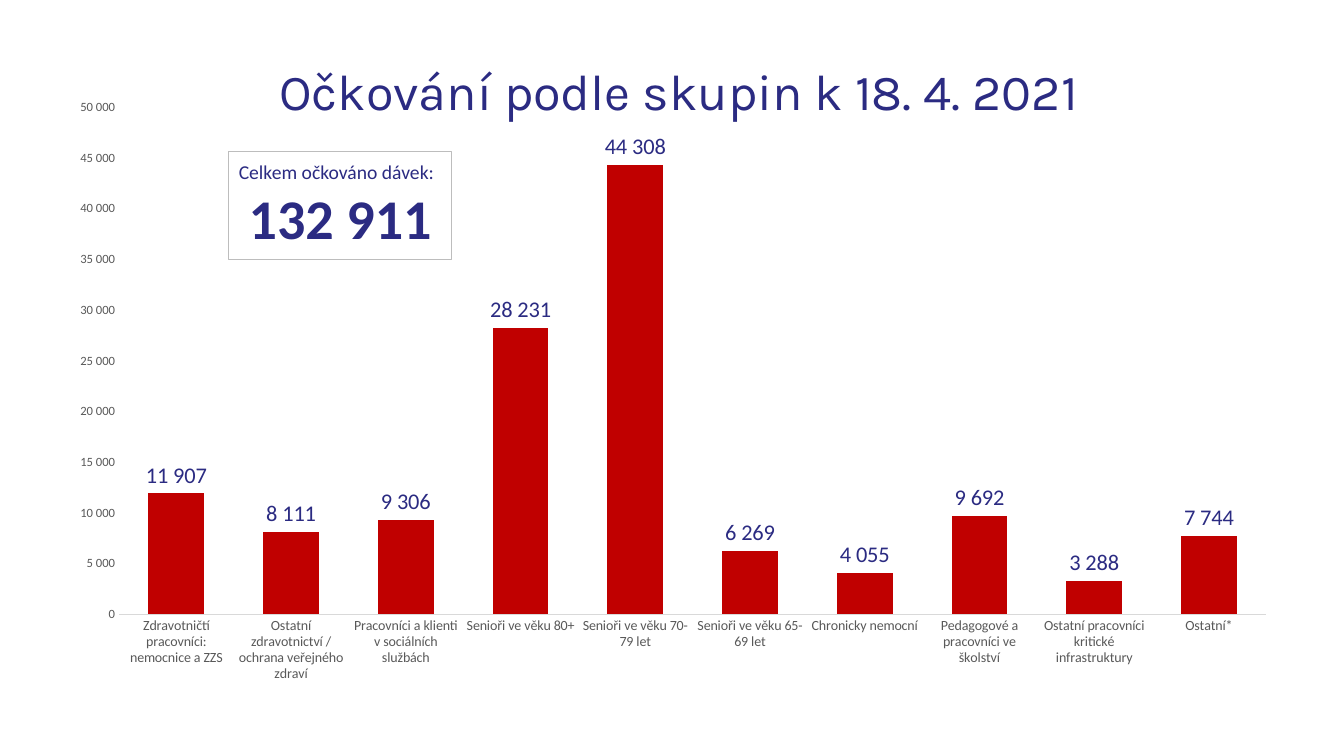
from dataclasses import dataclass

from lxml import etree
from pptx import Presentation
from pptx import util as u
from pptx.chart.data import CategoryChartData
from pptx.dml.color import RGBColor
from pptx.enum import chart as ch, shapes, text
from pptx.oxml import ns

COLS, ROWS = 64, 36


@dataclass(frozen=True)
class Theme:
    navy: str = "2B2B82"
    red: str = "C00000"
    grey: str = "595959"
    axis: str = "D9D9D9"
    border: str = "BDBDBD"
    white: str = "FFFFFF"
    body: str = "Calibri"
    heading: str = "Karla"
    title: int = 36
    total: int = 40
    value: int = 16
    caption: int = 14
    category: int = 10
    scale: int = 9
    number: str = r"[$-10405]#\ ##0;\(#\ ##0\)"


GROUPS = {
    "Zdravotničtí pracovníci: nemocnice a ZZS": 11907,
    "Ostatní zdravotnictví / ochrana veřejného zdraví": 8111,
    "Pracovníci a klienti v sociálních službách": 9306,
    "Senioři ve věku 80+": 28231,
    "Senioři ve věku 70-79 let": 44308,
    "Senioři ve věku 65-69 let": 6269,
    "Chronicky nemocní": 4055,
    "Pedagogové a pracovníci ve školství": 9692,
    "Ostatní pracovníci kritické infrastruktury": 3288,
    "Ostatní*": 7744,
}


class SlideBuilder:
    def __init__(self, prs, theme):
        self.theme = theme
        self.s = prs.slides.add_slide(prs.slide_layouts[6])
        self.col = prs.slide_width / COLS
        self.row = prs.slide_height / ROWS

    def cells(self, x, y, w, h):
        return (round(x * self.col), round(y * self.row),
                round(w * self.col), round(h * self.row))

    def style(self, font, size, color, name=None, bold=False):
        font.size, font.bold = u.Pt(size), bold
        font.name = name or self.theme.body
        font.color.rgb = RGBColor.from_string(color)

    def box(self, cells, lines):
        sp = self.s.shapes.add_shape(shapes.MSO_SHAPE.RECTANGLE, *self.cells(*cells))
        sp.shadow.inherit = False
        sp.fill.solid()
        sp.fill.fore_color.rgb = RGBColor.from_string(self.theme.white)
        sp.line.color.rgb = RGBColor.from_string(self.theme.border)
        sp.line.width = u.Pt(0.75)
        tf = sp.text_frame
        tf.word_wrap = True
        for i, (words, size, bold, align) in enumerate(lines):
            p = tf.add_paragraph() if i else tf.paragraphs[0]
            p.alignment = align
            r = p.add_run()
            r.text = words
            self.style(r.font, size, self.theme.navy, bold=bold)

    def layout(self, parent, index, **settings):
        """Place a chart part by shares of the chart's size."""
        for old in parent.findall(ns.qn("c:layout")):
            parent.remove(old)
        layout = etree.Element(ns.qn("c:layout"))
        manual = etree.SubElement(layout, ns.qn("c:manualLayout"))
        for tag, val in settings.items():
            etree.SubElement(manual, ns.qn(f"c:{tag}")).set("val", str(val))
        parent.insert(index, layout)

    def axis(self, axis, size):
        axis.has_major_gridlines = False
        axis.major_tick_mark = axis.minor_tick_mark = ch.XL_TICK_MARK.NONE
        self.style(axis.tick_labels.font, size, self.theme.grey)

    def column_chart(self, cells, title, groups):
        t = self.theme
        data = CategoryChartData(number_format=t.number)
        data.categories = list(groups)
        data.add_series("Series 1", list(groups.values()))
        chart = self.s.shapes.add_chart(
            ch.XL_CHART_TYPE.COLUMN_CLUSTERED, *self.cells(*cells), data).chart
        chart.has_legend = False
        chart.font.name, chart.font.size = t.body, u.Pt(t.category)

        # Title
        p = chart.chart_title.text_frame.paragraphs[0]
        r = p.add_run()
        r.text = title
        self.style(r.font, t.title, t.navy, t.heading)
        self.layout(chart.chart_title._element, 1,
                    xMode="edge", yMode="edge", x=0.17, y=0.04)

        # Axes
        self.axis(chart.category_axis, t.category)
        line = chart.category_axis.format.line
        line.color.rgb = RGBColor.from_string(t.axis)
        line.width = u.Pt(0.75)
        scale = chart.value_axis
        self.axis(scale, t.scale)
        scale.format.line.fill.background()
        scale.minimum_scale, scale.maximum_scale, scale.major_unit = 0, 50000, 5000
        scale.tick_labels.number_format = t.number
        scale.tick_labels.number_format_is_linked = False

        # Columns and their values
        plot = chart.plots[0]
        plot.vary_by_categories = False
        plot.gap_width, plot.overlap = 106, -27
        fill = plot.series[0].format.fill
        fill.solid()
        fill.fore_color.rgb = RGBColor.from_string(t.red)
        labels = plot.series[0].data_labels
        labels.show_value = True
        labels.position = ch.XL_LABEL_POSITION.OUTSIDE_END
        labels.number_format = t.number
        labels.number_format_is_linked = False
        self.style(labels.font, t.value, t.navy)
        area = chart._chartSpace.find(f".//{ns.qn('c:plotArea')}")
        self.layout(area, 0, layoutTarget="inner", xMode="edge", yMode="edge",
                    x=0.046, y=0.121, w=0.942, h=0.71)


def main():
    prs = Presentation()
    prs.slide_width, prs.slide_height = u.Inches(13.33), u.Inches(7.5)
    theme = Theme()
    slide = SlideBuilder(prs, theme)

    # Total doses
    slide.box((10.9, 7.2, 10.6, 5.14), [
        ("Celkem očkováno dávek:", theme.caption, False, text.PP_ALIGN.LEFT),
        ("132 911", theme.total, True, text.PP_ALIGN.CENTER),
    ])

    # Doses by group
    slide.column_chart((3, 1, 58, 34), "Očkování podle skupin k 18. 4. 2021", GROUPS)
    prs.save("out.pptx")


if __name__ == "__main__":
    main()
